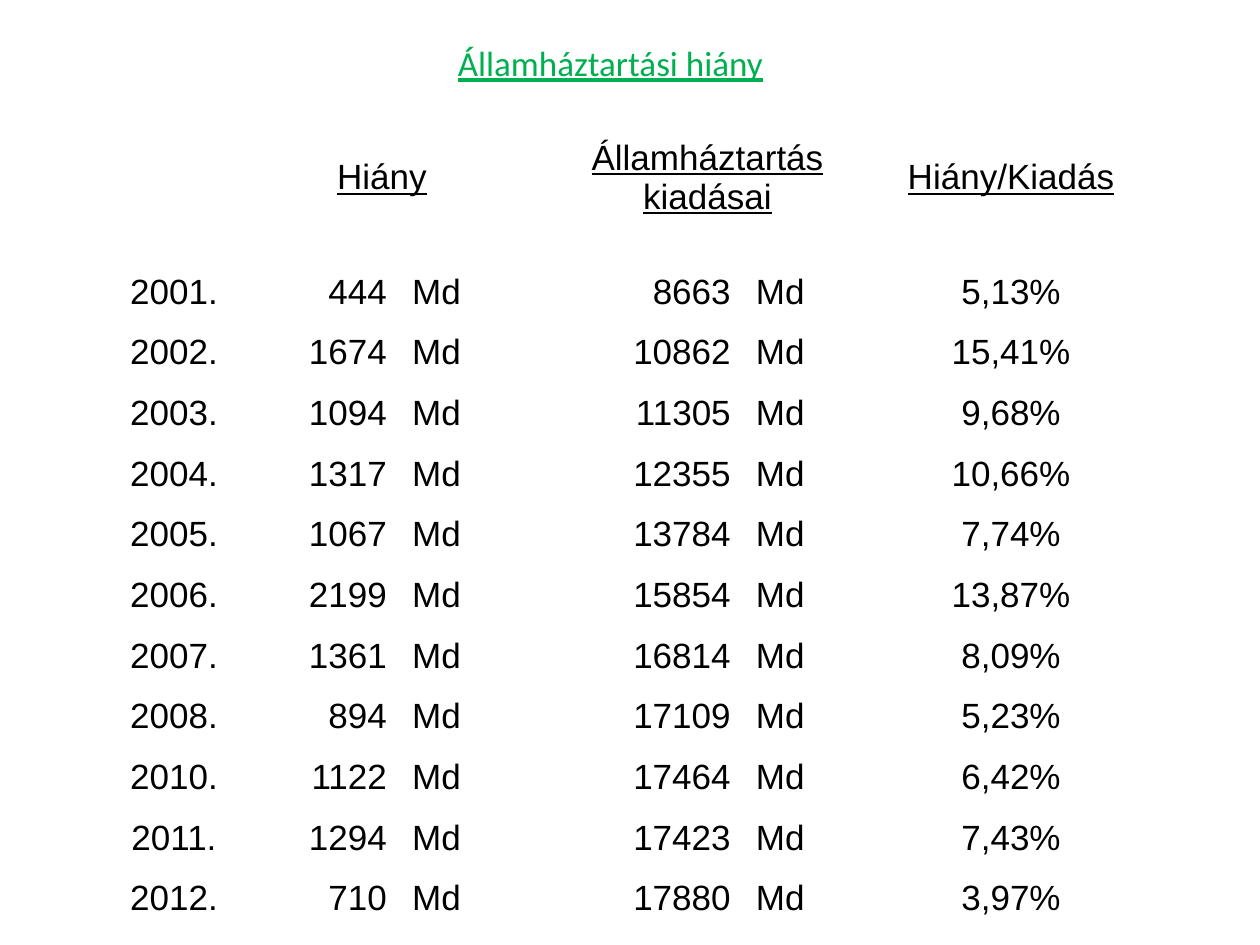
import pptx
import pptx.util
import pptx.dml.color
import pptx.enum.text

Pt = pptx.util.Pt
ALIGN = pptx.enum.text.PP_ALIGN
ANCHOR = pptx.enum.text.MSO_ANCHOR

BLACK = "000000"
GREEN = "00B050"
COL_WIDTHS = [79.2, 89.3, 69.1, 127.4, 86.4, 133.2]
COL_ALIGNS = [ALIGN.CENTER, ALIGN.RIGHT, ALIGN.LEFT,
              ALIGN.RIGHT, ALIGN.LEFT, ALIGN.CENTER]
HEADER_HEIGHT = 90.7
HEADERS = {1: "Hiány", 3: "Államháztartás kiadásai", 5: "Hiány/Kiadás"}
UNIT = "Md"
BUDGET = [
    ("2001.", "444", "8663", "5,13%"),
    ("2002.", "1674", "10862", "15,41%"),
    ("2003.", "1094", "11305", "9,68%"),
    ("2004.", "1317", "12355", "10,66%"),
    ("2005.", "1067", "13784", "7,74%"),
    ("2006.", "2199", "15854", "13,87%"),
    ("2007.", "1361", "16814", "8,09%"),
    ("2008.", "894", "17109", "5,23%"),
    ("2010.", "1122", "17464", "6,42%"),
    ("2011.", "1294", "17423", "7,43%"),
    ("2012.", "710", "17880", "3,97%"),
]


def rgb(color):
    return pptx.dml.color.RGBColor.from_string(color)


def write(tf, text, size=20, font="Arial", color=BLACK, underline=False,
          align=ALIGN.CENTER):
    p = tf.paragraphs[0]
    p.alignment = align
    r = p.add_run()
    r.text = text
    r.font.size = Pt(size)
    r.font.name = font
    r.font.underline = underline
    r.font.color.rgb = rgb(color)


def add_title(slide, left, top, width, height):
    tf = slide.shapes.add_textbox(Pt(left), Pt(top), Pt(width), Pt(height)).text_frame
    tf.word_wrap = True
    tf.auto_size = pptx.enum.text.MSO_AUTO_SIZE.SHAPE_TO_FIT_TEXT
    write(tf, "Államháztartási hiány", font="Calibri", color=GREEN, underline=True)


def add_budget_table(slide, left, top, width, height):
    table = slide.shapes.add_table(len(BUDGET) + 1, len(COL_WIDTHS), Pt(left),
                                   Pt(top), Pt(width), Pt(height)).table
    table.first_row = False
    table.horz_banding = False
    for column, col_width in zip(table.columns, COL_WIDTHS):
        column.width = Pt(col_width)
    row_height = (height - HEADER_HEIGHT) / len(BUDGET)
    for i, row in enumerate(table.rows):
        row.height = Pt(row_height if i else HEADER_HEIGHT)
    for cell in table.iter_cells():
        cell.fill.background()

    for col in (1, 3):
        table.cell(0, col).merge(table.cell(0, col + 1))
    for col, text in HEADERS.items():
        cell = table.cell(0, col)
        cell.vertical_anchor = ANCHOR.MIDDLE
        write(cell.text_frame, text, underline=True)

    for i, (year, deficit, spending, ratio) in enumerate(BUDGET, start=1):
        values = (year, deficit, UNIT, spending, UNIT, ratio)
        for col, (text, align) in enumerate(zip(values, COL_ALIGNS)):
            cell = table.cell(i, col)
            cell.vertical_anchor = ANCHOR.BOTTOM
            write(cell.text_frame, text, align=align)


def main():
    prs = pptx.Presentation()
    prs.slide_width, prs.slide_height = Pt(720), Pt(540)
    slide = prs.slides.add_slide(prs.slide_layouts[6])
    add_budget_table(slide, 59.8, 56.2, sum(COL_WIDTHS), 472.3)
    add_title(slide, 229.7, 20.2, 238.3, 31.7)
    prs.save("out.pptx")


if __name__ == "__main__":
    main()
